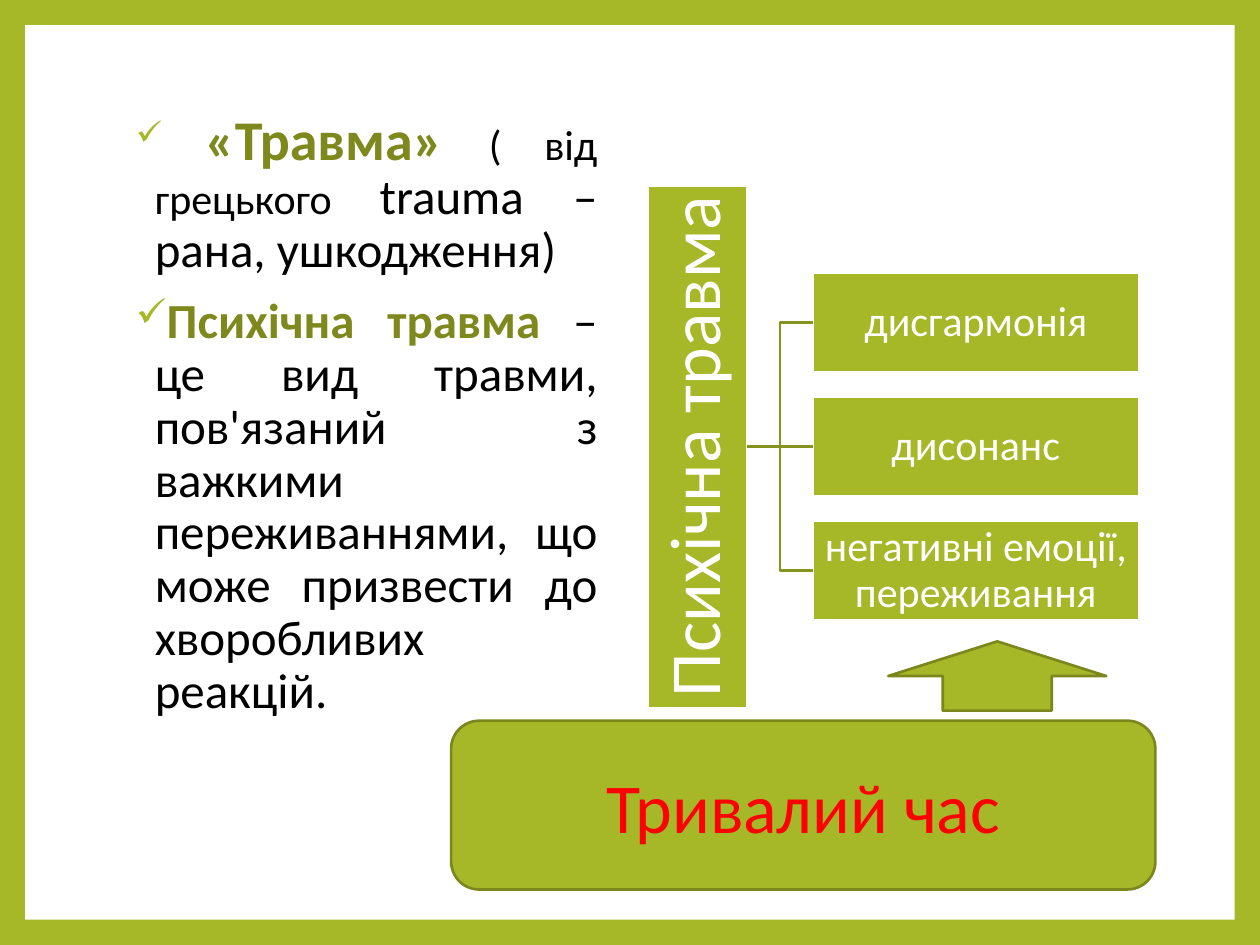
from dataclasses import dataclass
from typing import Optional

from lxml.etree import SubElement
from pptx import Presentation
from pptx.dml.color import RGBColor
from pptx.enum.shapes import MSO_CONNECTOR, MSO_SHAPE
from pptx.enum.text import MSO_ANCHOR, PP_ALIGN
from pptx.oxml.ns import qn
from pptx.util import Inches, Pt


@dataclass(frozen=True)
class Theme:
    font: str = "Calibri"
    green: str = "A6B727"
    term: str = "7D891D"
    edge: str = "7B871D"
    branch: str = "85931F"
    white: str = "FFFFFF"
    black: str = "000000"
    red: str = "FF0000"
    small: int = 24
    body: int = 28
    large: int = 32
    time: int = 40
    root: int = 41
    line: float = 1.5


@dataclass(frozen=True)
class Span:
    text: str
    size: int
    color: str
    bold: bool = False


@dataclass(frozen=True)
class Box:
    left: float
    top: float
    width: float
    height: float
    kind: MSO_SHAPE = MSO_SHAPE.RECTANGLE
    fill: str = Theme.green
    edge: Optional[str] = Theme.white
    span: Optional[Span] = None
    inset: float = 0.02
    spacing: float = 0.9


THEME = Theme()
DEFINITIONS = [
    [
        Span(" ", THEME.small, THEME.green),
        Span("«Травма» ", THEME.large, THEME.term, True),
        Span("( від грецького ", THEME.small, THEME.black),
        Span("trauma – рана, ушкодження)", THEME.body, THEME.black),
    ],
    [
        Span("Психічна травма ", THEME.body, THEME.term, True),
        Span("– це вид травми, пов'язаний з важкими переживаннями, що може "
             "призвести до хворобливих реакцій.", THEME.body, THEME.black),
    ],
]
EFFECTS = ["дисгармонія", "дисонанс", "негативні емоції, переживання"]


def add_span(para, span: Span) -> None:
    """Add one formatted run to a paragraph."""
    run = para.add_run()
    run.text = span.text
    run.font.name = THEME.font
    run.font.size = Pt(span.size)
    run.font.bold = span.bold
    run.font.color.rgb = RGBColor.from_string(span.color)


def add_box(page, box: Box):
    """Draw a filled shape with optional centred text."""
    shape = page.shapes.add_shape(
        box.kind, Inches(box.left), Inches(box.top), Inches(box.width), Inches(box.height))
    shape.shadow.inherit = False
    shape.fill.solid()
    shape.fill.fore_color.rgb = RGBColor.from_string(box.fill)
    if box.edge:
        shape.line.color.rgb = RGBColor.from_string(box.edge)
        shape.line.width = Pt(THEME.line)
    else:
        shape.line.fill.background()
    if box.span:
        frame = shape.text_frame
        frame.word_wrap = True
        frame.vertical_anchor = MSO_ANCHOR.MIDDLE
        frame.margin_left = frame.margin_right = Inches(box.inset)
        frame.margin_top = frame.margin_bottom = Inches(box.inset)
        para = frame.paragraphs[0]
        para.alignment = PP_ALIGN.CENTER
        para.line_spacing = box.spacing
        add_span(para, box.span)
    return shape


def add_check_bullet(para) -> None:
    """Give a paragraph a hanging check mark."""
    properties = para._p.get_or_add_pPr()
    properties.set("marL", str(Inches(0.19)))
    properties.set("indent", str(Inches(-0.15)))
    color = SubElement(properties, qn("a:buClr"))
    SubElement(color, qn("a:srgbClr"), val=THEME.green)
    SubElement(properties, qn("a:buSzPct"), val="80000")
    SubElement(properties, qn("a:buChar"), char="✓")


def add_definitions(page) -> None:
    """Write the bulleted definitions."""
    frame = page.shapes.add_textbox(
        Inches(0.94), Inches(0.84), Inches(3.9), Inches(5.2)).text_frame
    frame.word_wrap = True
    for index, spans in enumerate(DEFINITIONS):
        para = frame.add_paragraph() if index else frame.paragraphs[0]
        para.alignment = PP_ALIGN.JUSTIFY
        para.line_spacing = 0.9
        if index:
            para.space_before = Pt(10)
        add_check_bullet(para)
        for span in spans:
            add_span(para, span)


def add_branch(page, root, leaf, kind: MSO_CONNECTOR) -> None:
    """Join the root's right side to a leaf's left side."""
    branch = page.shapes.add_connector(kind, 0, 0, 0, 0)
    branch.begin_connect(root, 3)
    branch.end_connect(leaf, 1)
    branch.line.color.rgb = RGBColor.from_string(THEME.branch)
    branch.line.width = Pt(THEME.line)
    SubElement(branch._element.spPr, qn("a:effectLst"))


def add_hierarchy(page) -> None:
    """Draw the vertical root and its three effects."""
    root = add_box(page, Box(5.14, 1.47, 0.79, 4.15, inset=0.03,
                             span=Span("Психічна травма ", THEME.root, THEME.white)))
    root.text_frame._txBody.bodyPr.set("vert", "vert270")
    middle = len(EFFECTS) // 2
    for index, text in enumerate(EFFECTS):
        top = 3.15 + (index - middle) * 0.985
        leaf = add_box(page, Box(6.45, top, 2.59, 0.79,
                                 span=Span(text, THEME.small, THEME.white)))
        kind = MSO_CONNECTOR.STRAIGHT if index == middle else MSO_CONNECTOR.ELBOW
        add_branch(page, root, leaf, kind)


def main() -> None:
    """Build and save the slide."""
    deck = Presentation()
    deck.slide_width, deck.slide_height = Inches(10), Inches(7.5)
    page = deck.slides.add_slide(deck.slide_layouts[6])
    page.background.fill.solid()
    page.background.fill.fore_color.rgb = RGBColor.from_string(THEME.green)
    add_box(page, Box(0.2, 0.2, 9.6, 7.1, fill=THEME.white, edge=None))
    add_definitions(page)
    add_hierarchy(page)
    add_box(page, Box(3.58, 5.72, 5.59, 1.34, MSO_SHAPE.FLOWCHART_ALTERNATE_PROCESS,
                      edge=THEME.edge, inset=0.1, spacing=1.0,
                      span=Span("Тривалий час", THEME.time, THEME.red)))
    add_box(page, Box(7.05, 5.09, 1.73, 0.55, MSO_SHAPE.UP_ARROW, edge=THEME.edge))
    deck.save("out.pptx")


if __name__ == "__main__":
    main()
